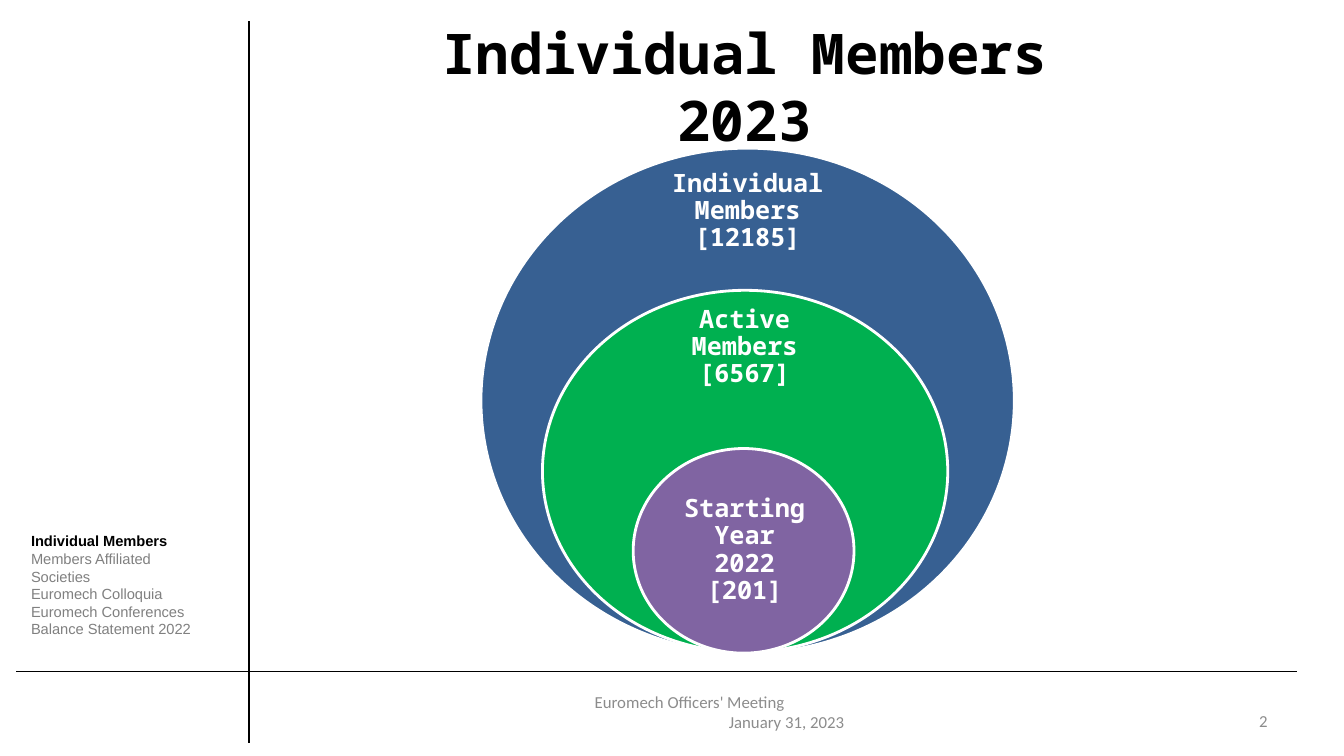
from lxml.etree import SubElement
from pptx import Presentation
from pptx.dml.color import RGBColor
from pptx.enum.shapes import MSO_CONNECTOR, MSO_SHAPE
from pptx.enum.text import MSO_ANCHOR, PP_ALIGN
from pptx.oxml.ns import qn
from pptx.util import Inches, Pt

COLORS = {
    "black": "000000",
    "white": "FFFFFF",
    "blue": "376092",
    "green": "00B050",
    "purple": "8064A2",
    "gray": "808080",
    "footer": "8C8C8C",
}
TITLE = {"name": "Noto Sans Mono", "size": Pt(40), "bold": True}
RING = {"name": "Noto Sans Mono", "size": Pt(18), "bold": True}
AGENDA = {"name": "Arial", "size": Pt(10.5), "bold": False}
CURRENT = {**AGENDA, "bold": True}
FOOTER = {"name": "Calibri", "size": Pt(12), "bold": False}

RINGS = [
    ("blue", (4.77, 1.47, 5.29, 5.01), (1.72, 0.25, 1.85, 0.75),
     "Individual Members [12185]"),
    ("green", (5.38, 2.88, 4.02, 3.59), (1.07, 0.23, 1.87, 0.67),
     "Active Members [6567]"),
    ("purple", (6.28, 4.45, 2.19, 2.03), (0.33, 0.5, 1.55, 1.02),
     "Starting Year 2022\v[201]"),
]
TOPICS = [
    "Individual Members",
    "Members Affiliated Societies",
    "Euromech Colloquia",
    "Euromech Conferences",
    "Balance Statement 2022",
]


def rgb(color):
    return RGBColor.from_string(COLORS[color])


def set_font(font, style, color):
    for key, value in style.items():
        setattr(font, key, value)
    font.color.rgb = rgb(color)


def add_text(page, box, lines, align, anchor=MSO_ANCHOR.MIDDLE, inset=None):
    frame = page.shapes.add_textbox(*map(Inches, box)).text_frame
    layout = {"word_wrap": True, "vertical_anchor": anchor}
    if inset is not None:
        for side in ("left", "top", "right", "bottom"):
            layout[f"margin_{side}"] = Inches(inset)
    for key, value in layout.items():
        setattr(frame, key, value)
    for index, (text, style, color) in enumerate(lines):
        para = frame.add_paragraph() if index else frame.paragraphs[0]
        para.text = text
        para.alignment = align
        for span in para.runs:
            set_font(span.font, style, color)
    return frame


def add_rule(page, start, end):
    rule = page.shapes.add_connector(
        MSO_CONNECTOR.STRAIGHT, *map(Inches, start + end))
    rule.line.color.rgb = rgb("black")
    rule.line.width = Pt(1)
    SubElement(rule._element.spPr, qn("a:effectLst"))


def add_ring(page, color, box, label_box, label):
    left, top, width, height = box
    ring = page.shapes.add_shape(MSO_SHAPE.OVAL, *map(Inches, box))
    ring.shadow.inherit = False
    ring.fill.solid()
    ring.fill.fore_color.rgb = rgb(color)
    ring.line.color.rgb = rgb("white")
    ring.line.width = Pt(2)
    dx, dy, label_width, label_height = label_box
    frame = add_text(page, (left + dx, top + dy, label_width, label_height),
                     [(label, RING, "white")], PP_ALIGN.CENTER, inset=0.14)
    frame.paragraphs[0].line_spacing = 0.9


def add_agenda(page, box):
    lines = [(topic, AGENDA, "gray") for topic in TOPICS]
    lines[0] = (TOPICS[0], CURRENT, "black")
    add_text(page, box, lines, PP_ALIGN.LEFT, MSO_ANCHOR.TOP)


def add_footer(page, box, number_box):
    lines = [(text, FOOTER, "footer")
             for text in ("Euromech Officers' Meeting", "January 31, 2023")]
    frame = add_text(page, box, lines, PP_ALIGN.LEFT)
    date_format = frame.paragraphs[1]._p.get_or_add_pPr()
    date_format.set("marL", str(Inches(1.33)))
    add_text(page, number_box, [("2", FOOTER, "footer")], PP_ALIGN.RIGHT)


def main():
    deck = Presentation()
    deck.slide_width, deck.slide_height = Inches(13.33), Inches(7.5)
    page = deck.slides.add_slide(deck.slide_layouts[6])
    add_rule(page, (2.47, 0.21), (2.47, 7.37))
    add_rule(page, (0.16, 6.66), (12.86, 6.66))
    add_text(page, (3.6, 0.22, 7.57, 1.25),
             [("Individual Members 2023", TITLE, "black")], PP_ALIGN.CENTER)
    for ring in RINGS:
        add_ring(page, *ring)
    add_agenda(page, (0.21, 5.23, 1.93, 1.34))
    add_footer(page, (5.8, 6.86, 3.17, 0.4), (9.56, 6.95, 3.11, 0.4))
    deck.save("out.pptx")


if __name__ == "__main__":
    main()
